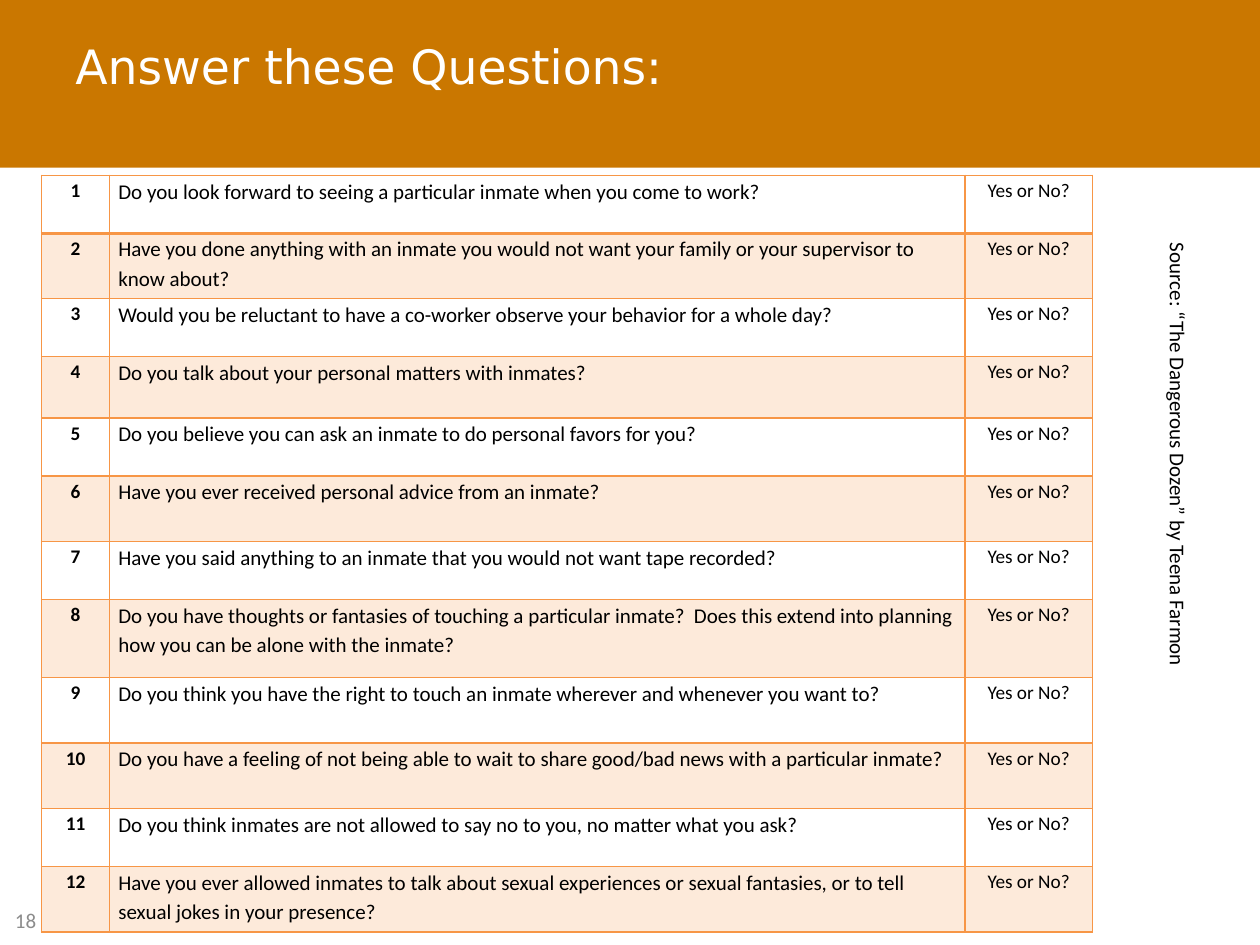
"""Build the slide with twelve yes-or-no questions."""
from lxml.etree import SubElement
from pptx import Presentation
from pptx.dml.color import RGBColor
from pptx.enum.shapes import MSO_SHAPE
from pptx.enum.text import MSO_ANCHOR, PP_ALIGN
from pptx.oxml import parse_xml
from pptx.oxml.ns import nsdecls
from pptx.util import Inches, Pt

ORANGE = "F79646"
COLS = [5.4, 67.9, 10.1]
QUESTIONS = [
    (6.13, "Do you look forward to seeing a particular inmate when you come to work?"),
    (6.93, "Have you done anything with an inmate you would not want your family or your supervisor to know about?"),
    (6.13, "Would you be reluctant to have a co-worker observe your behavior for a whole day?"),
    (6.53, "Do you talk about your personal matters with inmates?"),
    (6.13, "Do you believe you can ask an inmate to do personal favors for you?"),
    (6.93, "Have you ever received personal advice from an inmate?"),
    (6.13, "Have you said anything to an inmate that you would not want tape recorded?"),
    (8.27, "Do you have thoughts or fantasies of touching a particular inmate?  Does this extend into planning how you can be alone with the inmate?"),
    (6.93, "Do you think you have the right to touch an inmate wherever and whenever you want to?"),
    (6.93, "Do you have a feeling of not being able to wait to share good/bad news with a particular inmate?"),
    (6.13, "Do you think inmates are not allowed to say no to you, no matter what you ask?"),
    (6.93, "Have you ever allowed inmates to talk about sexual experiences or sexual fantasies, or to tell sexual jokes in your presence?"),
]

prs = Presentation()
prs.slide_width, prs.slide_height = Inches(10), Inches(7.5)
W, H = prs.slide_width / 100, prs.slide_height / 100
s = prs.slides.add_slide(prs.slide_layouts[6])


def rgb(color):
    return RGBColor.from_string(color)


def write(tf, text, size, color="000000", font="Calibri", bold=False):
    tf.word_wrap = True
    p = tf.paragraphs[0]
    p.text = text
    f = p.runs[0].font
    f.name, f.size, f.bold = font, Pt(size), bold
    f.color.rgb = rgb(color)
    return p


sp = s.shapes.add_shape(MSO_SHAPE.RECTANGLE, 0, 0, int(100 * W), int(17.75 * H))
sp.shadow.inherit = False
sp.fill.solid()
sp.fill.fore_color.rgb = rgb("CA7700")
sp.line.fill.background()

LABELS = [
    (5, 1.2, 90, 12.9, 0, "Answer these Questions:", 27, "FFFFFF", "DejaVu Sans"),
    (0.2, 94.67, 16.7, 5.33, 0, "18", 12, "8C8C8C", "Calibri"),
    (68, 56.4, 51, 4, 90, "Source: “The Dangerous Dozen” by Teena Farmon", 12, "000000", "Calibri"),
]
for x, y, w, h, turn, text, size, color, font in LABELS:
    sp = s.shapes.add_textbox(int(x * W), int(y * H), int(w * W), int(h * H))
    sp.rotation = turn
    tf = sp.text_frame
    tf.vertical_anchor = MSO_ANCHOR.TOP if turn else MSO_ANCHOR.MIDDLE
    p = write(tf, text, size, color, font)
    if size == 27:
        p.line_spacing = Pt(25)

frame = s.shapes.add_table(len(QUESTIONS), len(COLS), int(3.3 * W), int(18.55 * H),
                           int(sum(COLS) * W), int(sum(h for h, q in QUESTIONS) * H))
table = frame.table
for col, share in zip(table.columns, COLS):
    col.width = int(share * W)
for i, (height, question) in enumerate(QUESTIONS):
    table.rows[i].height = int(height * H)
    for j, text in enumerate([str(i + 1), question, "Yes or No?"]):
        cell = table.cell(i, j)
        cell.margin_left = cell.margin_right = Inches(0.07)
        cell.margin_top = cell.margin_bottom = 0
        p = write(cell.text_frame, text, 12 if j == 1 else 11, bold=j == 0)
        p.alignment = PP_ALIGN.LEFT if j == 1 else PP_ALIGN.CENTER
        p.line_spacing = 1.15
        tcPr = cell._tc.get_or_add_tcPr()
        for side in "LRTB":
            pt = 2 if (i, side) in [(0, "B"), (1, "T")] else 1
            ln = parse_xml(f'<a:ln{side} {nsdecls("a")} w="{Pt(pt)}"><a:solidFill/></a:ln{side}>')
            SubElement(ln[0], ln[0].tag.replace("solidFill", "srgbClr"), val=ORANGE)
            tcPr.append(ln)
        if i % 2:
            cell.fill.solid()
            cell.fill.fore_color.rgb = rgb("FDEADA")
        else:
            cell.fill.background()

prs.save("out.pptx")
